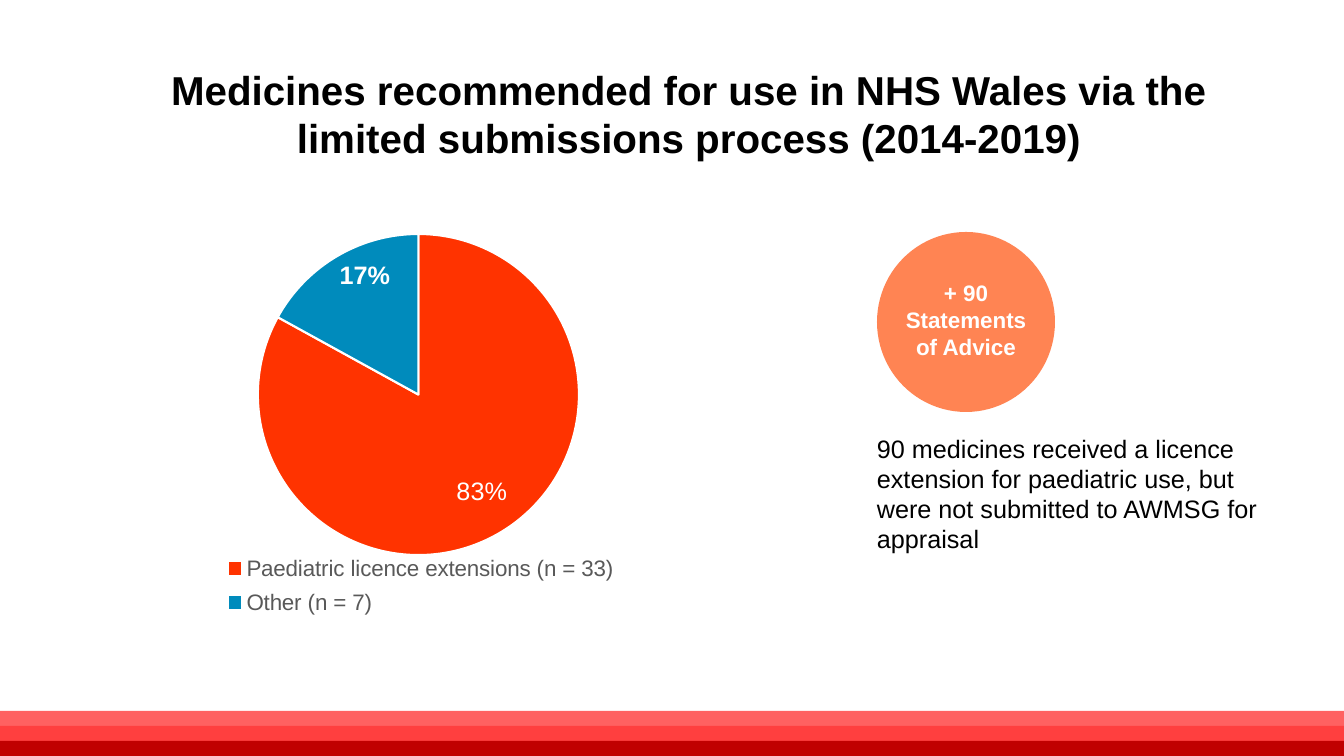
from dataclasses import dataclass

from pptx import Presentation
from pptx.chart.data import CategoryChartData
from pptx.dml.color import RGBColor
from pptx.enum.chart import XL_CHART_TYPE, XL_LABEL_POSITION, XL_LEGEND_POSITION
from pptx.enum.shapes import MSO_SHAPE
from pptx.enum.text import MSO_ANCHOR, PP_ALIGN
from pptx.oxml import parse_xml
from pptx.oxml.ns import nsdecls
from pptx.util import Pt

PX = 914400 / 100.8
PIE = XL_CHART_TYPE.PIE
BOTTOM = XL_LEGEND_POSITION.BOTTOM
INSIDE = XL_LABEL_POSITION.INSIDE_END
RECT, OVAL = MSO_SHAPE.RECTANGLE, MSO_SHAPE.OVAL
TOP, MIDDLE = MSO_ANCHOR.TOP, MSO_ANCHOR.MIDDLE
LEFT, CENTER = PP_ALIGN.LEFT, PP_ALIGN.CENTER


@dataclass(frozen=True)
class Theme:
    face: str = "Arial"
    black: str = "000000"
    white: str = "FFFFFF"
    grey: str = "595959"
    coral: str = "FF8453"
    bands: tuple = ("FF6161", "FF3F3F", "C00000")
    slices: tuple = ("FF3300", "008BBC")
    title: float = 28.8
    body: int = 18
    small: int = 16


THEME = Theme()


def px(*sizes):
    return [round(size * PX) for size in sizes]


def apply(target, values):
    for name, value in values.items():
        setattr(target, name, value)


def style(font, size, color, bold=False):
    apply(font, {"name": THEME.face, "size": Pt(size), "bold": bold})
    font.color.rgb = RGBColor.from_string(color)


def write(shape, text, size, color, bold=False, align=LEFT, anchor=TOP):
    frame = shape.text_frame
    apply(frame, {"word_wrap": True, "vertical_anchor": anchor})
    line = frame.paragraphs[0]
    line.alignment = align
    run = line.add_run()
    run.text = text
    style(run.font, size, color, bold)


def add_text(slide, box, text, size, **look):
    shape = slide.shapes.add_textbox(*px(*box))
    write(shape, text, size, THEME.black, **look)


def add_form(slide, kind, box, color):
    shape = slide.shapes.add_shape(kind, *px(*box))
    shape.shadow.inherit = False
    shape.fill.solid()
    shape.fill.fore_color.rgb = RGBColor.from_string(color)
    shape.line.fill.background()
    return shape


def layout(modes, **sizes):
    marks = "".join(f'<c:{name} val="{mode}"/>' for name, mode in modes.items())
    marks += "".join(f'<c:{name} val="{size}"/>' for name, size in sizes.items())
    return parse_xml(
        f'<c:layout {nsdecls("c")}><c:manualLayout>{marks}'
        "</c:manualLayout></c:layout>"
    )


def place(parent, node):
    for old in parent.findall(node.tag):
        parent.remove(old)
    parent.insert(0, node)


def add_pie(slide, box, names, values):
    data = CategoryChartData(number_format="0%")
    data.categories = names
    data.add_series("Series 1", values)
    chart = slide.shapes.add_chart(PIE, *px(*box), data).chart
    apply(chart, {"has_title": False, "has_legend": True})
    style(chart.font, 10, THEME.black)
    edge = {"xMode": "edge", "yMode": "edge"}

    legend = chart.legend
    apply(legend, {"position": BOTTOM, "include_in_layout": False})
    style(legend.font, THEME.small, THEME.grey)
    spot = layout(edge, x=0.1, y=0.81, w=0.82, h=0.18)
    legend._element.find(spot.tag.replace("layout", "legendPos")).addnext(spot)

    plot = chart.plots[0]
    plot.vary_by_categories = True
    area = layout(
        {"layoutTarget": "inner", **edge}, x=0.18, y=0.09, w=0.65, h=0.74
    )
    place(chart._chartSpace.chart.plotArea, area)

    series = plot.series[0]
    labels = series.data_labels
    apply(labels, {"show_value": True, "show_percentage": False,
                   "number_format": "0%", "number_format_is_linked": False,
                   "position": INSIDE})
    style(labels.font, THEME.body, THEME.white, True)
    for index, color in enumerate(THEME.slices):
        form = series.points[index].format
        form.fill.solid()
        form.fill.fore_color.rgb = RGBColor.from_string(color)
        form.line.color.rgb = RGBColor.from_string(THEME.white)
        form.line.width = Pt(1.5)
    label = series.points[0].data_label
    style(label.font, THEME.body, THEME.white)
    label.position = INSIDE
    shift = layout({}, x=0.02, y=-0.05)
    label._get_or_add_dLbl().find(shift.tag.replace("layout", "idx")).addnext(shift)


def main():
    deck = Presentation()
    apply(deck, dict(zip(("slide_width", "slide_height"), px(1344, 756))))
    slide = deck.slides.add_slide(deck.slide_layouts[6])

    for row, color in enumerate(THEME.bands):
        add_form(slide, RECT, (0, 711 + 15 * row, 1344, 15), color)
    add_text(
        slide, (101, 60, 1176, 84),
        "Medicines recommended for use in NHS Wales via the "
        "limited submissions process (2014-2019)",
        THEME.title, bold=True, align=CENTER,
    )
    add_pie(
        slide, (169, 195, 494, 434),
        ("Paediatric licence extensions (n = 33)", "Other (n = 7)"),
        (0.83, 0.17),
    )
    add_text(
        slide, (867, 428, 400, 132),
        "90 medicines received a licence extension for paediatric use, "
        "but were not submitted to AWMSG for appraisal",
        THEME.body,
    )
    badge = add_form(slide, OVAL, (877, 232, 178, 180), THEME.coral)
    apply(badge.text_frame, {"margin_left": 0, "margin_top": 0,
                             "margin_right": 0, "margin_bottom": px(5)[0]})
    write(badge, "+ 90 Statements of Advice", THEME.small, THEME.white,
          True, CENTER, MIDDLE)
    deck.save("out.pptx")


if __name__ == "__main__":
    main()
